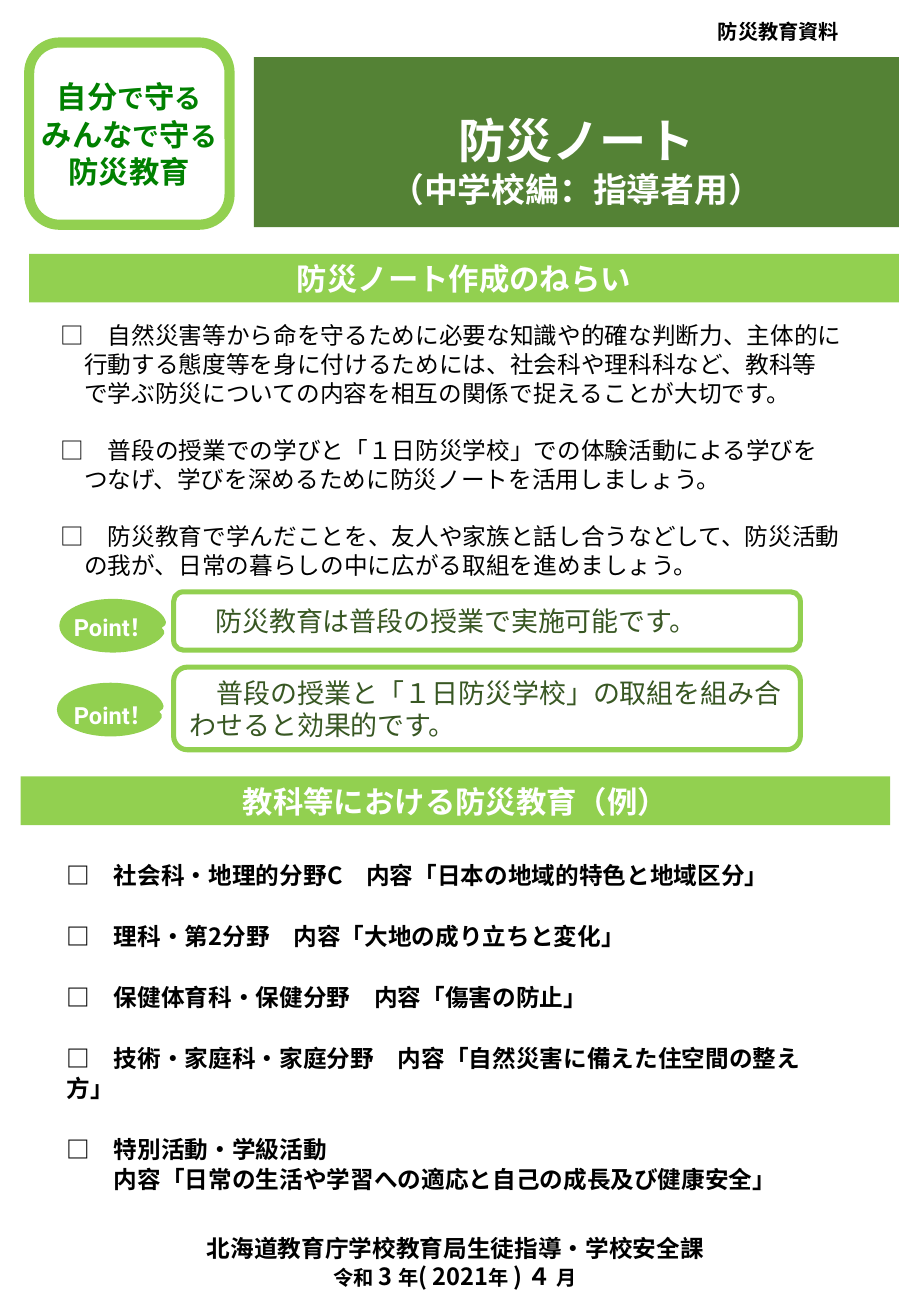
from lxml.etree import SubElement
from pptx import Presentation
from pptx.dml.color import RGBColor
from pptx.enum.shapes import MSO_SHAPE
from pptx.enum.text import MSO_ANCHOR, MSO_AUTO_SIZE, PP_ALIGN
from pptx.oxml.ns import qn
from pptx.util import Inches, Pt

JAPANESE = "Noto Sans CJK JP"
LIME, FOREST, PINE, GREEN = "92D050", "548235", "385723", "008000"
WHITE, BLACK = "FFFFFF", "000000"

deck = Presentation()
deck.slide_width, deck.slide_height = Inches(7.5), Inches(10.83)
slide = deck.slides.add_slide(deck.slide_layouts[5])


def panel(kind, at, fill=None, line=None, weight=3, adjust=()):
    shape = slide.shapes.add_shape(kind, *map(Inches, at))
    shape.shadow.inherit = False
    if fill:
        shape.fill.solid()
        shape.fill.fore_color.rgb = RGBColor.from_string(fill)
    else:
        shape.fill.background()
    if line:
        shape.line.color.rgb = RGBColor.from_string(line)
        shape.line.width = Pt(weight)
    else:
        shape.line.fill.background()
    for index, value in enumerate(adjust):
        shape.adjustments[index] = value
    return shape


def write(shape, paragraphs, size=14, color=BLACK, bold=False, font=JAPANESE,
          align=PP_ALIGN.CENTER, anchor=MSO_ANCHOR.TOP, inset=(0.1, 0.05, 0.1, 0.05),
          wrap=True, gap=0, left=0, first=0, leading=None):
    """Fill a shape; each paragraph is a list of (text, size) runs or a string with line breaks."""
    frame = shape.text_frame
    frame.auto_size = MSO_AUTO_SIZE.NONE
    frame.word_wrap, frame.vertical_anchor = wrap, anchor
    (frame.margin_left, frame.margin_top,
     frame.margin_right, frame.margin_bottom) = map(Inches, inset)
    for number, content in enumerate(paragraphs):
        paragraph = frame.add_paragraph() if number else frame.paragraphs[0]
        runs = [(content, size)] if isinstance(content, str) else content
        paragraph.alignment = align
        paragraph.line_spacing = Pt(leading or round(1.21 * max(s for _, s in runs)))
        paragraph.space_before = Pt(gap if number else 0)
        properties = paragraph._p.get_or_add_pPr()
        properties.set("marL", str(Pt(left)))
        properties.set("indent", str(Pt(first)))
        for text, points in runs:
            for row, words in enumerate(text.split("\n")):
                if row:
                    paragraph.add_line_break()
                run = paragraph.add_run()
                run.text = words
                run.font.size, run.font.bold, run.font.name = Pt(points), bold, font
                run.font.color.rgb = RGBColor.from_string(color)
                SubElement(run._r.get_or_add_rPr(), qn("a:ea")).set("typeface", JAPANESE)


# Heading
title = slide.shapes.title
title.left, title.top, title.width, title.height = map(Inches, (2.09, 0.47, 5.31, 1.4))
title.fill.solid()
title.fill.fore_color.rgb = RGBColor.from_string(FOREST)
write(title, [[("防災ノート", 28)], [("（中学校編：指導者用）", 20)]], color=WHITE, bold=True,
      font="Arial", anchor=MSO_ANCHOR.BOTTOM, inset=(0.1, 0.05, 0.1, 0.15))

category = panel(MSO_SHAPE.RECTANGLE, (5.42, 0.07, 1.98, 0.27), fill=WHITE)
write(category, ["防災教育資料"], size=12, bold=True, inset=(0.1, 0.08, 0.1, 0.05))

motto = panel(MSO_SHAPE.ROUNDED_RECTANGLE, (0.24, 0.35, 1.65, 1.5), line=LIME, weight=6)
write(motto, [[("自分", 18), ("で", 16), ("守", 18), ("る", 16)],
              [("みんな", 18), ("で", 16), ("守", 18), ("る", 16)],
              [("防災教育", 18)]],
      color=GREEN, bold=True, anchor=MSO_ANCHOR.MIDDLE, inset=(0, 0, 0, 0))

# Section banners
for x, y, heading in [(0.24, 2.09, "防災ノート作成のねらい"),
                      (0.17, 6.39, "教科等における防災教育（例）")]:
    banner = panel(MSO_SHAPE.RECTANGLE, (x, y, 7.16, 0.4), fill=LIME)
    write(banner, [heading], size=18, color=WHITE, bold=True)

# Aims
aims = panel(MSO_SHAPE.ROUNDED_RECTANGLE, (0.49, 2.63, 6.91, 2.12), adjust=[0.015])
write(aims, [
    "□　自然災害等から命を守るために必要な知識や的確な判断力、主体的に\n"
    "行動する態度等を身に付けるためには、社会科や理科科など、教科等\n"
    "で学ぶ防災についての内容を相互の関係で捉えることが大切です。",
    "□　普段の授業での学びと「１日防災学校」での体験活動による学びを\n"
    "つなげ、学びを深めるために防災ノートを活用しましょう。",
    "□　防災教育で学んだことを、友人や家族と話し合うなどして、防災活動\n"
    "の我が、日常の暮らしの中に広がる取組を進めましょう。",
], align=PP_ALIGN.LEFT, inset=(0, 0, 0, 0), gap=17, left=14, first=-14)

# Points
for bubble_at, label_y, advice_y, advice_height, advice in [
    ((0.51, 4.95), 4.99, 4.87, 0.48, "防災教育は普段の授業で実施可能です。"),
    ((0.49, 5.64), 5.72, 5.49, 0.68,
     "普段の授業と「１日防災学校」の取組を組み合わせると効果的です。"),
]:
    panel(MSO_SHAPE.OVAL_CALLOUT, (*bubble_at, 0.84, 0.4), fill=LIME, line=LIME,
          adjust=[0.443, 0.036])
    label = slide.shapes.add_textbox(*map(Inches, (0.51, label_y, 0.94, 0.34)))
    write(label, ["Point！"], color=WHITE, bold=True, font="Roboto",
          align=PP_ALIGN.LEFT, wrap=False)
    frame_box = panel(MSO_SHAPE.ROUNDED_RECTANGLE, (1.43, advice_y, 5.16, advice_height),
                      line=LIME)
    write(frame_box, [advice], size=16, color=PINE, align=PP_ALIGN.LEFT,
          anchor=MSO_ANCHOR.MIDDLE, inset=(0.1, 0, 0.05, 0), first=16)

# Subjects
subjects = slide.shapes.add_textbox(*map(Inches, (0.45, 6.77, 6.63, 2.88)))
write(subjects, [
    "□　社会科・地理的分野C　内容「日本の地域的特色と地域区分」",
    "□　理科・第2分野　内容「大地の成り立ちと変化」",
    "□　保健体育科・保健分野　内容「傷害の防止」",
    "□　技術・家庭科・家庭分野　内容「自然災害に備えた住空間の整え方」",
    "□　特別活動・学級活動\n内容「日常の生活や学習への適応と自己の成長及び健康安全」",
], bold=True, align=PP_ALIGN.LEFT, inset=(0.1, 0.3, 0.1, 0.05), gap=18, leading=18)
class_activities = subjects.text_frame.paragraphs[-1]._p.get_or_add_pPr()
class_activities.set("marL", str(Pt(28)))
class_activities.set("indent", str(Pt(-28)))

# Publisher
publisher = slide.shapes.add_textbox(0, Inches(10.1), deck.slide_width, Inches(0.56))
write(publisher, ["北海道教育庁学校教育局生徒指導・学校安全課",
                  [("令和 ", 12), ("3 ", 14), ("年", 12), ("( 2021", 14),
                   ("年 ", 12), (") ４ ", 14), ("月", 12)]], bold=True)

deck.save("out.pptx")
